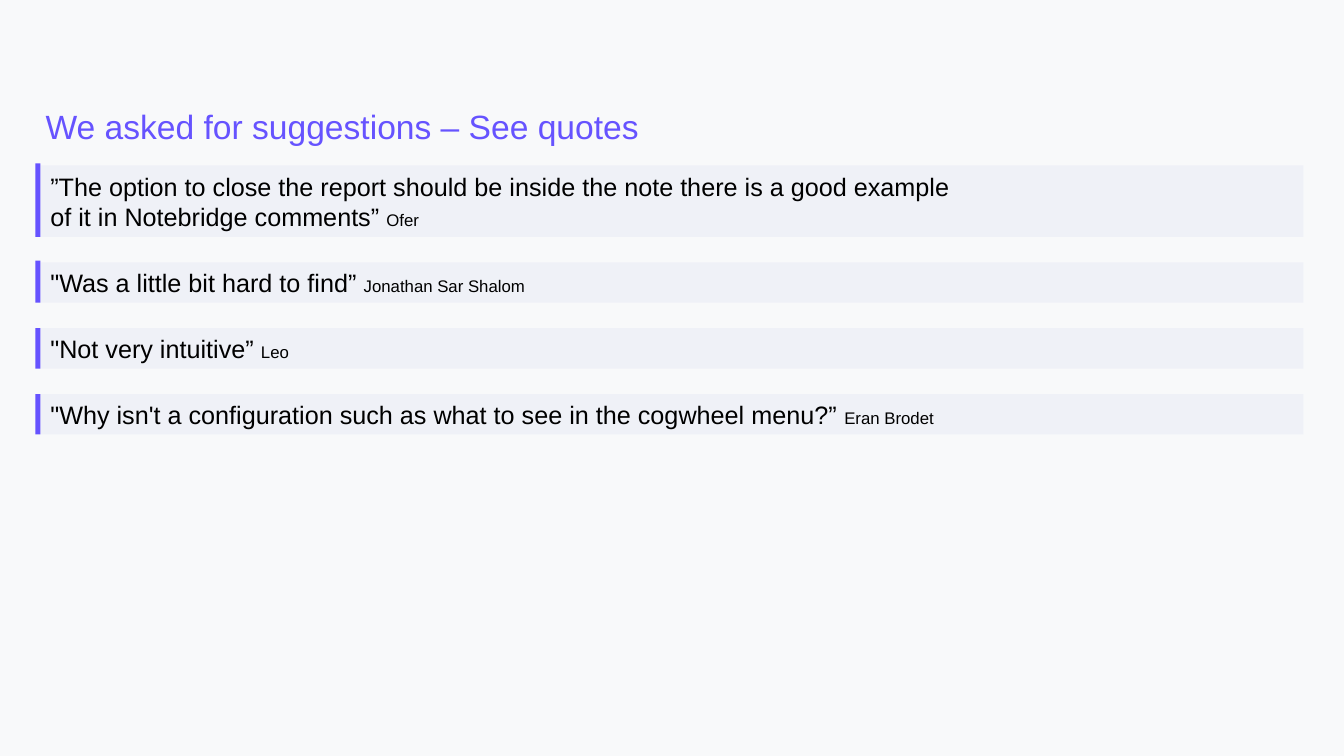
from dataclasses import dataclass

from lxml.etree import SubElement
from pptx import Presentation
from pptx.dml.color import RGBColor
from pptx.enum.shapes import MSO_SHAPE
from pptx.enum.text import MSO_ANCHOR, PP_ALIGN
from pptx.oxml.ns import qn
from pptx.shapes.autoshape import Shape
from pptx.slide import Slide
from pptx.text.text import _Run as Run
from pptx.util import Cm, Pt

COLORS = {
    "background": "F8F9FA",
    "accent": "6653FF",
    "band": "BEC6EA",
    "text": "000000",
}
FONT = "Arial"
BAND_OPACITY = 15
BAND_LEFT, BAND_WIDTH = 1.02, 31.83
ACCENT_LEFT, ACCENT_WIDTH = 0.89, 0.13
FIRST_TOP, GAP = 4.17, 0.64


@dataclass(frozen=True)
class Quote:
    lines: tuple[str, ...]
    author: str
    height: float = 1.02
    accent_rise: float = 0.0


QUOTES = (
    Quote(
        (
            "”The option to close the report should be inside the note there is a good example",
            "of it in Notebridge comments” ",
        ),
        "Ofer",
        height=1.8,
        accent_rise=0.05,
    ),
    Quote(('"Was a little bit hard to find” ',), "Jonathan Sar Shalom", accent_rise=0.04),
    Quote(('"Not very intuitive” ',), "Leo"),
    Quote(
        ('"Why isn\'t a configuration such as what to see in the cogwheel menu?” ',),
        "Eran Brodet",
    ),
)


def color(name: str) -> RGBColor:
    return RGBColor.from_string(COLORS[name])


def format_run(run: Run, size: int, color_name: str) -> None:
    run.font.name = FONT
    run.font.size = Pt(size)
    run.font.color.rgb = color(color_name)


def add_bar(
    slide: Slide, left: float, top: float, width: float, height: float, color_name: str
) -> Shape:
    shape = slide.shapes.add_shape(
        MSO_SHAPE.RECTANGLE, Cm(left), Cm(top), Cm(width), Cm(height)
    )
    shape.shadow.inherit = False
    shape.fill.solid()
    shape.fill.fore_color.rgb = color(color_name)
    shape.line.fill.background()
    return shape


def set_opacity(shape: Shape, percent: int) -> None:
    fill_color = shape.fill._xPr.find(qn("a:solidFill"))[0]
    SubElement(fill_color, qn("a:alpha"), val=str(percent * 1000))


def add_title(slide: Slide, title: str) -> None:
    box = slide.shapes.add_textbox(Cm(1.02), Cm(2.44), Cm(20.73), Cm(3.2))
    text_frame = box.text_frame
    text_frame.word_wrap = True
    text_frame.margin_left = text_frame.margin_right = Cm(0.13)
    text_frame.margin_top = Cm(0.23)
    text_frame.margin_bottom = Cm(0.13)
    text_frame.text = title
    format_run(text_frame.paragraphs[0].runs[0], 24, "accent")


def add_quote(slide: Slide, quote: Quote, top: float) -> None:
    band = add_bar(slide, BAND_LEFT, top, BAND_WIDTH, quote.height, "band")
    set_opacity(band, BAND_OPACITY)
    text_frame = band.text_frame
    text_frame.word_wrap = True
    text_frame.vertical_anchor = MSO_ANCHOR.MIDDLE
    text_frame.text = "\n".join(quote.lines)
    for paragraph in text_frame.paragraphs:
        paragraph.alignment = PP_ALIGN.LEFT
        format_run(paragraph.runs[0], 18, "text")
    author = text_frame.paragraphs[-1].add_run()
    author.text = quote.author
    format_run(author, 12, "text")
    add_bar(
        slide,
        ACCENT_LEFT,
        top - quote.accent_rise,
        ACCENT_WIDTH,
        quote.height + quote.accent_rise,
        "accent",
    )


def main() -> None:
    presentation = Presentation()
    presentation.slide_width = Cm(33.87)
    presentation.slide_height = Cm(19.05)
    slide = presentation.slides.add_slide(presentation.slide_layouts[6])
    slide.background.fill.solid()
    slide.background.fill.fore_color.rgb = color("background")

    add_title(slide, "We asked for suggestions – See quotes")
    top = FIRST_TOP
    for quote in QUOTES:
        add_quote(slide, quote, top)
        top += quote.height + GAP

    presentation.save("out.pptx")


if __name__ == "__main__":
    main()
